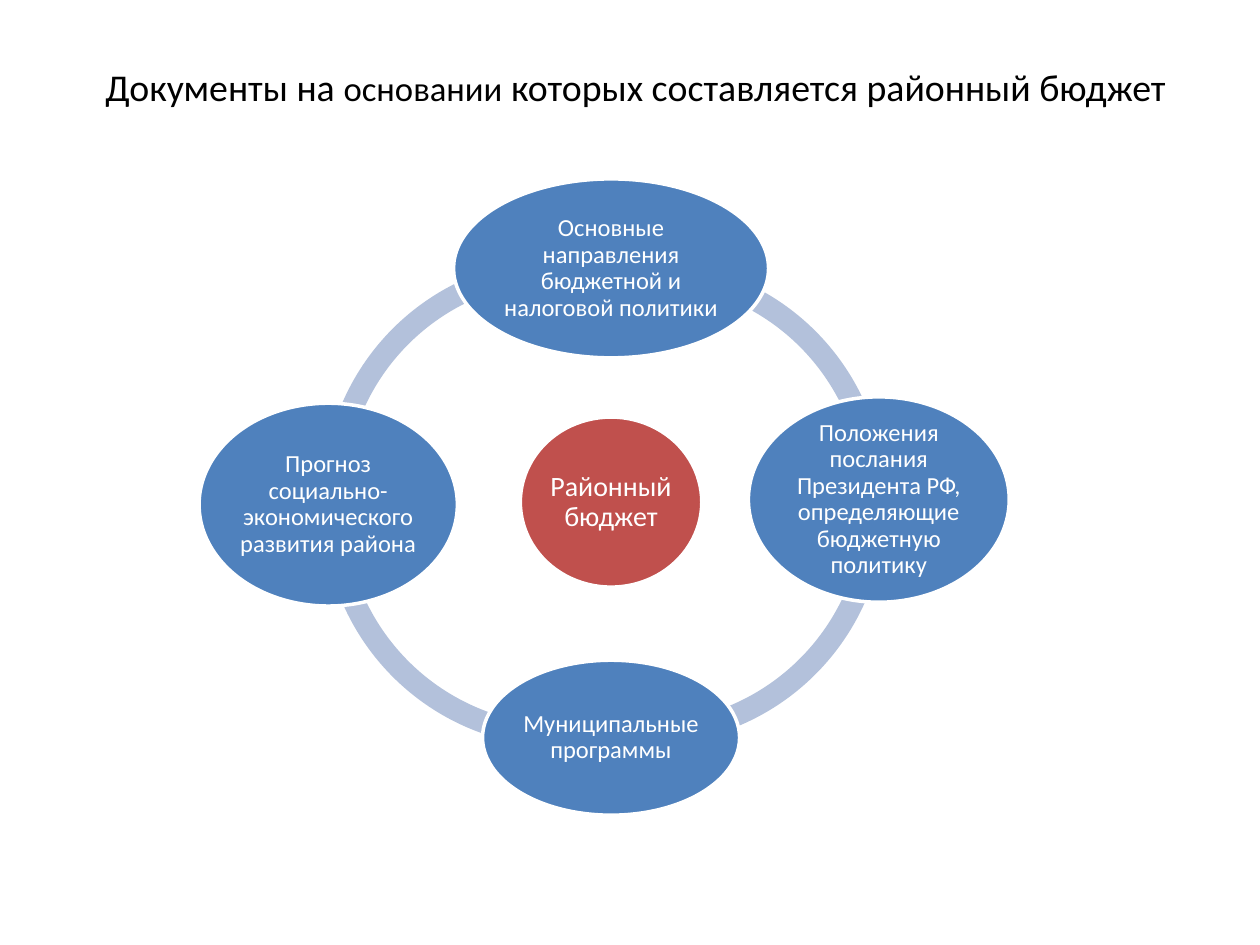
"""Build a slide on the documents behind the district budget."""
from pptx import Presentation
from pptx.dml.color import RGBColor
from pptx.enum.shapes import MSO_SHAPE
from pptx.enum.text import MSO_ANCHOR, PP_ALIGN
from pptx.util import Inches, Pt

HUES = {"ink": "000000", "white": "FFFFFF", "arc": "B3C1DB",
        "core": "C0504D", "node": "4F81BD"}


def hue(name):
    return RGBColor.from_string(HUES[name])


def add_run(para, text, size, tint):
    run = para.add_run()
    run.text = text
    run.font.name = "Calibri"
    run.font.size = Pt(size)
    run.font.color.rgb = hue(tint)


deck = Presentation()
deck.slide_width, deck.slide_height = Inches(10), Inches(7.5)
slide = deck.slides.add_slide(deck.slide_layouts[6])

title = slide.shapes.add_textbox(Inches(0.59), Inches(0.3), Inches(8.91), Inches(0.77))
frame = title.text_frame
frame.word_wrap = True
frame.vertical_anchor = MSO_ANCHOR.MIDDLE
para = frame.paragraphs[0]
para.alignment = PP_ALIGN.CENTER
add_run(para, "Документы на ", 21.6, "ink")
add_run(para, "основании", 19.8, "ink")
add_run(para, " которых составляется районный бюджет", 21.6, "ink")

arcs = [(2.56, 2.05, 107.04, 169.08), (2.56, 2.12, 46.93, 108.49),
        (3.22, 2.1, 215.24, 59.04), (3.22, 2.07, 156.97, 215.98)]
for left, top, start, end in arcs:
    arc = slide.shapes.add_shape(MSO_SHAPE.BLOCK_ARC, Inches(left), Inches(top),
                                 Inches(3.81), Inches(3.81))
    for i, value in enumerate((start, end, 0.046)):
        arc.adjustments[i] = value
    arc.shadow.inherit = False
    arc.fill.solid()
    arc.fill.fore_color.rgb = hue("arc")
    arc.line.fill.background()

ovals = [
    (4.13, 3.31, 1.44, 1.35, "core", 16, "Районный бюджет"),
    (3.6, 1.42, 2.5, 1.42, "node", 14,
     "Основные направления бюджетной и налоговой политики"),
    (5.94, 3.15, 2.07, 1.63, "node", 14,
     "Положения послания Президента РФ, определяющие бюджетную политику"),
    (3.83, 5.24, 2.04, 1.23, "node", 14, "Муниципальные программы"),
    (1.58, 3.2, 2.05, 1.61, "node", 14,
     "Прогноз социально-экономического развития района"),
]
for left, top, width, height, tint, size, text in ovals:
    oval = slide.shapes.add_shape(MSO_SHAPE.OVAL, Inches(left), Inches(top),
                                  Inches(width), Inches(height))
    oval.shadow.inherit = False
    oval.fill.solid()
    oval.fill.fore_color.rgb = hue(tint)
    oval.line.color.rgb = hue("white")
    oval.line.width = Pt(2)
    frame = oval.text_frame
    frame.word_wrap = True
    frame.vertical_anchor = MSO_ANCHOR.MIDDLE
    frame.margin_left = frame.margin_right = Inches(0.02)
    frame.margin_top = frame.margin_bottom = Inches(0.02)
    para = frame.paragraphs[0]
    para.alignment = PP_ALIGN.CENTER
    para.line_spacing = 0.9
    add_run(para, text, size, "white")

deck.save("out.pptx")
